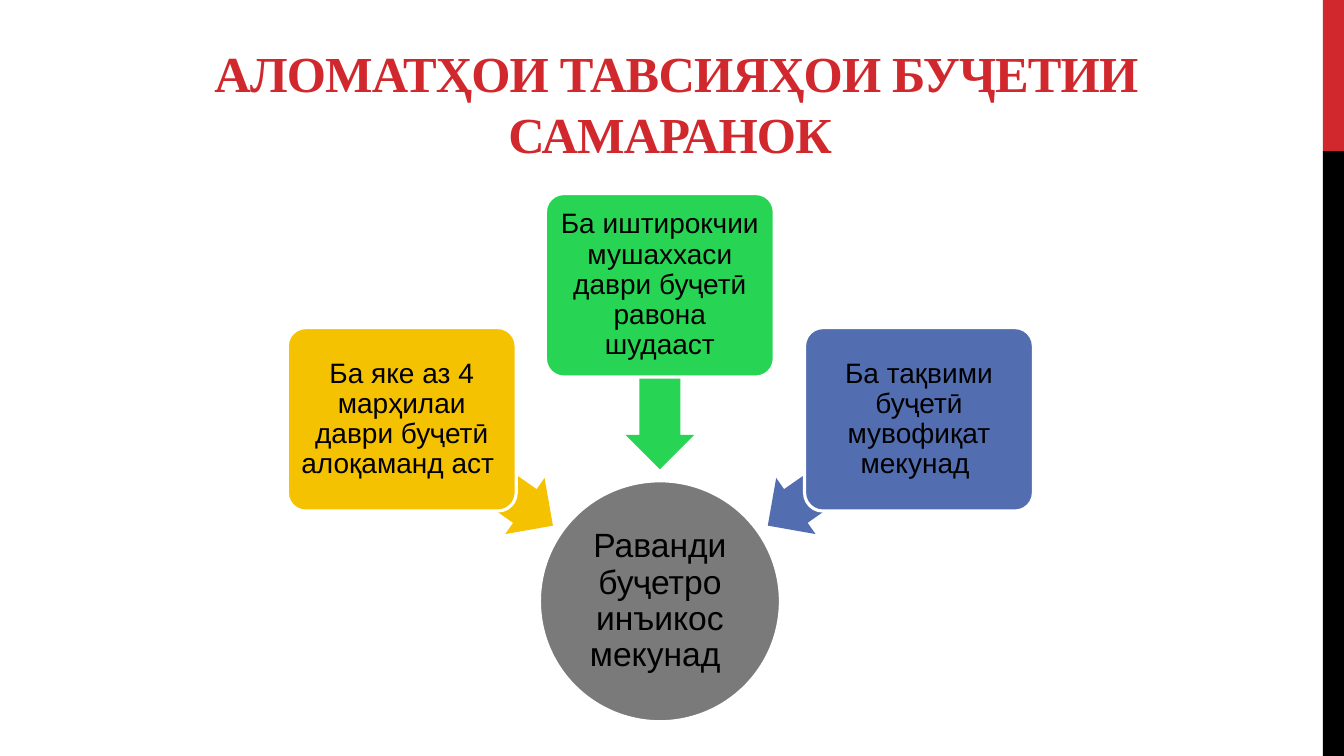
from pptx import Presentation
from pptx.dml.color import RGBColor
from pptx.enum.shapes import MSO_SHAPE
from pptx.enum.text import MSO_ANCHOR, MSO_AUTO_SIZE, PP_ALIGN
from pptx.util import Inches, Pt

RECT, ROUND = MSO_SHAPE.RECTANGLE, MSO_SHAPE.ROUNDED_RECTANGLE
OVAL, ARROW = MSO_SHAPE.OVAL, MSO_SHAPE.LEFT_ARROW
CENTER = PP_ALIGN.CENTER
MIDDLE, BOTTOM = MSO_ANCHOR.MIDDLE, MSO_ANCHOR.BOTTOM
TITLE_ONLY = 5

COLORS = {
    "red": "D1282E", "black": "000000", "white": "FFFFFF", "gray": "7A7A7A",
    "yellow": "F5C201", "green": "28D453", "blue": "526DB0",
}
BOX_W, BOX_H = 2.27, 1.82
ARROW_W, ARROW_H = 1.83, 0.68

# text, color, box left and top, arrow left and top, arrow rotation
FEATURES = [
    ("Ба яке аз 4 марҳилаи даври буҷетӣ алоқаманд аст ", "yellow",
     (2.85, 3.25), (3.82, 4.35), 215),
    ("Ба иштирокчии мушаххаси даври буҷетӣ равона шудааст", "green",
     (5.41, 1.92), (5.63, 3.4), 270),
    ("Ба тақвими буҷетӣ мувофиқат мекунад ", "blue",
     (7.98, 3.25), (7.45, 4.35), 325),
]


def rgb(name):
    return RGBColor.from_string(COLORS[name])


def write(tf, text, size, font="Arial", color="black", bold=False,
          anchor=MIDDLE, line_spacing=None, inset=None, tracking=None):
    """Fill a text frame with one centred paragraph; tracking is in points."""
    tf.word_wrap = True
    tf.auto_size = MSO_AUTO_SIZE.NONE
    tf.vertical_anchor = anchor
    if inset is not None:
        tf.margin_left = tf.margin_right = Inches(inset)
        tf.margin_top = tf.margin_bottom = Inches(inset)
    p = tf.paragraphs[0]
    p.alignment = CENTER
    if line_spacing:
        p.line_spacing = line_spacing
    r = p.add_run()
    r.text = text
    r.font.name, r.font.size, r.font.bold = font, Pt(size), bold
    r.font.color.rgb = rgb(color)
    if tracking:
        r.font._element.set("spc", str(round(tracking * 100)))


class Deck:
    def __init__(self):
        self.prs = Presentation()
        self.prs.slide_width, self.prs.slide_height = Inches(13.33), Inches(7.5)
        self.s = self.prs.slides.add_slide(self.prs.slide_layouts[TITLE_ONLY])

    def title(self, text, x, y, w, h):
        sp = self.s.shapes.title
        sp.left, sp.top, sp.width, sp.height = map(Inches, (x, y, w, h))
        write(sp.text_frame, text, 36, font="Times New Roman", color="red",
              bold=True, anchor=BOTTOM, tracking=-0.6)

    def shape(self, kind, x, y, w, h, fill, outlined=False, adj=(), rotation=0):
        sp = self.s.shapes.add_shape(kind, *map(Inches, (x, y, w, h)))
        sp.shadow.inherit = False
        sp.fill.solid()
        sp.fill.fore_color.rgb = rgb(fill)
        if outlined:
            sp.line.color.rgb = rgb("white")
            sp.line.width = Pt(2.25)
        else:
            sp.line.fill.background()
        for i, value in enumerate(adj):
            sp.adjustments[i] = value
        sp.rotation = rotation
        return sp

    def circle(self, text, x, y, d):
        sp = self.shape(OVAL, x, y, d, d, "gray", outlined=True)
        write(sp.text_frame, text, 24, line_spacing=0.9, inset=0.02)

    def feature(self, text, color, box, arrow, rotation):
        """Draw a box with its arrow behind it."""
        self.shape(ARROW, *arrow, ARROW_W, ARROW_H, color,
                   adj=(0.6, 0.5), rotation=rotation)
        sp = self.shape(ROUND, *box, BOX_W, BOX_H, color,
                        outlined=True, adj=(0.1,))
        write(sp.text_frame, text, 20, line_spacing=0.9, inset=0.04)


def main():
    deck = Deck()
    deck.shape(RECT, 13.12, 0, 0.21, 1.5, "red")
    deck.shape(RECT, 13.12, 1.5, 0.21, 6, "black")
    deck.title("АЛОМАТҲОИ ТАВСИЯҲОИ БУҶЕТИИ САМАРАНОК ", 0.64, 0.17, 12.13, 1.5)
    deck.circle("Раванди буҷетро инъикос мекунад ", 5.35, 4.77, 2.39)
    for feature in FEATURES:
        deck.feature(*feature)
    deck.prs.save("out.pptx")


if __name__ == "__main__":
    main()
